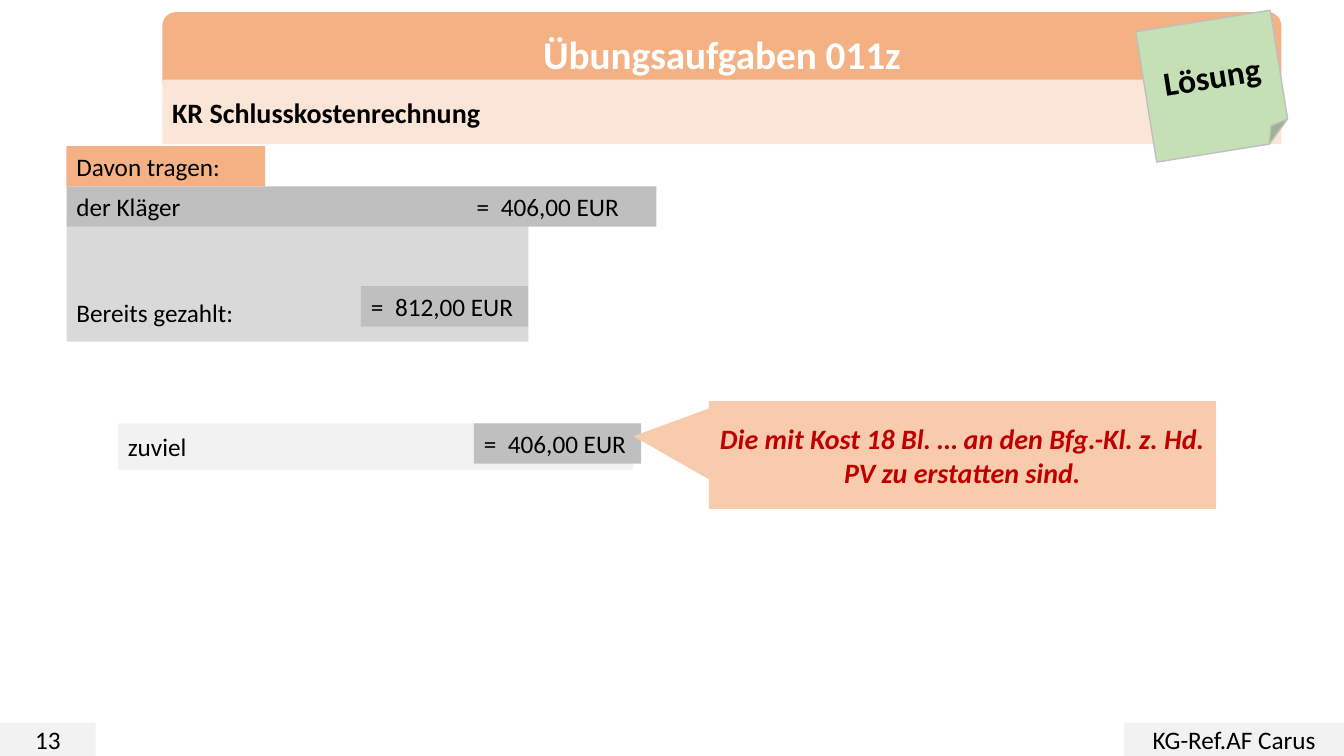
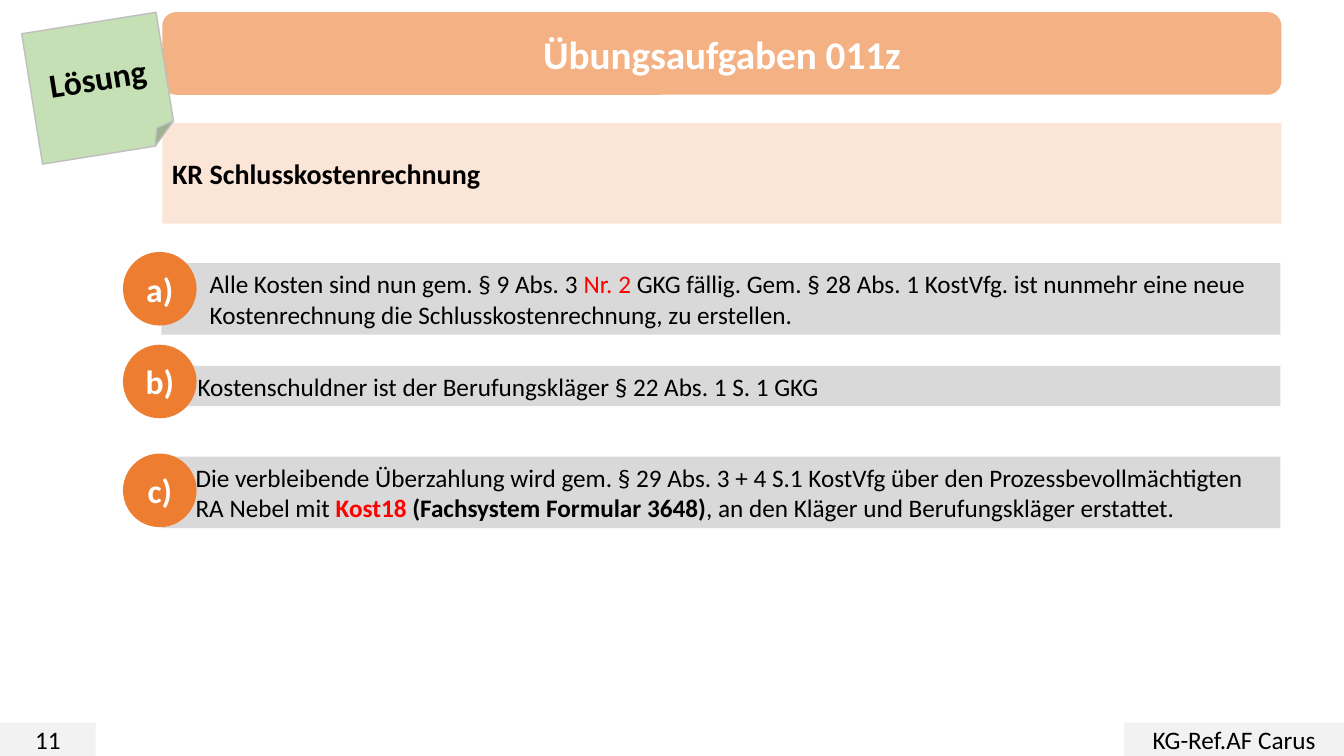
"""Build two solution slides about a final court-cost statement."""
from dataclasses import dataclass

from lxml import etree
from pptx import Presentation
from pptx.dml.color import RGBColor
from pptx.enum.shapes import MSO_SHAPE
from pptx.enum.text import MSO_ANCHOR, MSO_AUTO_SIZE, PP_ALIGN
from pptx.oxml.ns import qn
from pptx.util import Inches, Pt

RECT = MSO_SHAPE.RECTANGLE
ROUNDED = MSO_SHAPE.ROUNDED_RECTANGLE
NOTE = MSO_SHAPE.FOLDED_CORNER
TRIANGLE = MSO_SHAPE.ISOSCELES_TRIANGLE
DISC = MSO_SHAPE.FLOWCHART_CONNECTOR
LEFT, CENTER = PP_ALIGN.LEFT, PP_ALIGN.CENTER
MIDDLE, BOTTOM = MSO_ANCHOR.MIDDLE, MSO_ANCHOR.BOTTOM
FIXED_SIZE = MSO_AUTO_SIZE.NONE
TITLE_ONLY = 5


@dataclass(frozen=True)
class Theme:
    """Colours, font, type sizes and shared positions."""
    font: str = "Calibri"
    title_size: int = 28
    label_size: int = 24
    heading_size: int = 20
    body_size: int = 18
    black: str = "000000"
    white: str = "FFFFFF"
    red: str = "FF0000"
    dark_red: str = "C00000"
    orange: str = "ED7D31"
    apricot: str = "F4B183"
    peach: str = "F8CBAD"
    cream: str = "FBE5D6"
    green: str = "C5E0B4"
    mid_grey: str = "BFBFBF"
    light_grey: str = "D9D9D9"
    pale_grey: str = "F2F2F2"
    band_left: float = 1.61
    band_width: float = 11.1
    row_height: float = 0.4
    disc_size: float = 0.73
    amount_tab: float = 0.24


THEME = Theme()


def rgb(code):
    """Turn a hex code into a colour."""
    return RGBColor.from_string(code)


def place(shape, box):
    """Move and size a shape from left, top, width and height in inches."""
    shape.left, shape.top, shape.width, shape.height = map(Inches, box)


def add_run(paragraph, text, size=THEME.body_size, color=THEME.black,
            bold=False, italic=False):
    """Append one formatted run."""
    run = paragraph.add_run()
    run.text = text
    font = run.font
    font.name, font.size = THEME.font, Pt(size)
    font.bold, font.italic = bold, italic
    font.color.rgb = rgb(color)


def add_tabs(paragraph, stops):
    """Give a paragraph left tab stops, in inches from the text edge."""
    tab_list = etree.SubElement(paragraph._p.get_or_add_pPr(), qn("a:tabLst"))
    for stop in stops:
        etree.SubElement(tab_list, qn("a:tab"), pos=str(Inches(stop)), algn="l")


def write(shape, paragraphs, align=LEFT, anchor=MIDDLE, tabs=(), **style):
    """Fill a shape with paragraphs, each a list of (text, run style) pairs."""
    frame = shape.text_frame
    frame.word_wrap = True
    frame.auto_size = FIXED_SIZE
    frame.vertical_anchor = anchor
    for index, runs in enumerate(paragraphs):
        paragraph = frame.add_paragraph() if index else frame.paragraphs[0]
        paragraph.alignment = align
        if tabs:
            add_tabs(paragraph, tabs)
        for text, run_style in runs:
            add_run(paragraph, text, **{**style, **run_style})


def add_block(slide, box, fill, text=None, kind=RECT, **style):
    """Add a filled shape without outline, with an optional line of text."""
    block = slide.shapes.add_shape(kind, *map(Inches, box))
    block.shadow.inherit = False
    block.fill.solid()
    block.fill.fore_color.rgb = rgb(fill)
    block.line.fill.background()
    if text:
        write(block, [[(text, {})]], **style)
    return block


def add_title(slide, text):
    """Place the slide title on its rounded band."""
    box = (THEME.band_left, 0.12, THEME.band_width, 0.82)
    band = add_block(slide, box, THEME.apricot, kind=ROUNDED)
    title = slide.shapes.title
    title._element.addprevious(band._element)
    place(title, box)
    write(title, [[(text, {})]], align=CENTER, size=THEME.title_size,
          color=THEME.white, bold=True)


def add_solution_note(slide, left, top):
    """Add the tilted sticky note."""
    note = add_block(slide, (left, top, 1.35, 1.31), THEME.green, "Lösung",
                     kind=NOTE, align=CENTER, size=THEME.label_size, bold=True)
    note.line.color.rgb = rgb(THEME.mid_grey)
    note.line.width = Pt(1)
    note.rotation = 350.9


def add_footer(slide, number):
    """Add the page number and the author label."""
    for left, width, text in ((0, 0.95, number), (11.15, 2.18, "KG-Ref.AF Carus")):
        add_block(slide, (left, 7.17, width, 0.33), THEME.pale_grey, text,
                  align=CENTER)


def start_slide(deck, number, heading_top, heading_height, note_at):
    """Create a slide with the title, heading band, note and footer."""
    slide = deck.slides.add_slide(deck.slide_layouts[TITLE_ONLY])
    add_title(slide, "Übungsaufgaben 011z")
    add_block(slide, (THEME.band_left, heading_top, THEME.band_width, heading_height),
              THEME.cream, "KR Schlusskostenrechnung",
              size=THEME.heading_size, bold=True)
    add_solution_note(slide, *note_at)
    add_footer(slide, number)
    return slide


def add_amount(slide, left, top, amount):
    """Add a grey cell holding an amount."""
    add_block(slide, (left, top, 1.66, THEME.row_height), THEME.mid_grey,
              f"=\t{amount} EUR", tabs=(THEME.amount_tab,))


def add_refund_callout(slide, text):
    """Add the remark that points to the overpaid amount."""
    pointer = add_block(slide, (6.35, 4.23, 1.01, 0.85), THEME.peach, kind=TRIANGLE)
    pointer.adjustments[0] = 1
    pointer.rotation = 249.8
    add_block(slide, (7.03, 3.98, 5.03, 1.07), THEME.peach, text, align=CENTER,
              size=THEME.heading_size, color=THEME.dark_red, bold=True, italic=True)


def add_answer(slide, label, bar_top, bar_height, disc_top, indent, paragraphs):
    """Add a grey answer bar with its lettered disc."""
    bar = add_block(slide, (1.6, bar_top, THEME.band_width, bar_height),
                    THEME.light_grey)
    bar.text_frame.margin_left = Inches(indent)
    write(bar, paragraphs)
    add_block(slide, (1.22, disc_top, THEME.disc_size, THEME.disc_size),
              THEME.orange, label, kind=DISC, align=CENTER,
              size=THEME.label_size, color=THEME.white, bold=True)


def build_balance_slide(deck):
    """Show what the claimant owes, has paid and gets back."""
    slide = start_slide(deck, "13", 0.79, 0.64, (11.36, 0.2))
    paid = add_block(slide, (0.66, 2.17, 4.58, 1.22), THEME.light_grey,
                     "Bereits gezahlt:", anchor=BOTTOM)
    paid.text_frame.margin_bottom = Inches(0.14)
    add_block(slide, (0.66, 1.45, 1.97, THEME.row_height), THEME.apricot,
              "Davon tragen:")
    add_amount(slide, 3.58, 2.84, "812,00")
    share_tab = 3.97
    add_block(slide, (0.66, 1.85, 5.85, THEME.row_height), THEME.mid_grey,
              "der Kläger\t=\t406,00 EUR",
              tabs=(share_tab, share_tab + THEME.amount_tab))
    add_block(slide, (1.17, 4.2, 5.11, 0.46), THEME.pale_grey, "zuviel")
    add_amount(slide, 4.7, 4.2, "406,00")
    add_refund_callout(
        slide, "Die mit Kost 18 Bl. … an den Bfg.-Kl. z. Hd. PV zu erstatten sind.")


def build_answers_slide(deck):
    """Show the three lettered answers."""
    slide = start_slide(deck, "11", 1.22, 1, (0.31, 0.22))
    red = {"color": THEME.red}
    bold = {"bold": True}
    add_answer(slide, "a)", 2.61, 0.71, 2.5, 0.48, [[
        ("Alle Kosten sind nun gem. § 9 Abs. 3 ", {}),
        ("Nr. 2 ", red),
        ("GKG fällig. Gem. § 28 Abs. 1 KostVfg. ist nunmehr eine neue "
         "Kostenrechnung die Schlusskostenrechnung, zu erstellen.", {}),
    ]])
    add_answer(slide, "b)", 3.63, THEME.row_height, 3.42, 0.36, [[
        ("Kostenschuldner ist der Berufungskläger § 22 Abs. 1 S. 1 GKG", {}),
    ]])
    add_answer(slide, "c)", 4.53, 0.71, 4.5, 0.34, [
        [("Die verbleibende Überzahlung wird gem. § 29 Abs. 3 + 4 S.1 KostVfg "
          "über den Prozessbevollmächtigten", {})],
        [("RA Nebel mit ", {}),
         ("Kost18", {**red, **bold}),
         (" (Fachsystem Formular 3648)", bold),
         (", an den Kläger und Berufungskläger erstattet.", {})],
    ])


def main():
    """Build and save the deck."""
    deck = Presentation()
    deck.slide_width, deck.slide_height = Inches(13.33), Inches(7.5)
    build_balance_slide(deck)
    build_answers_slide(deck)
    deck.save("out.pptx")


if __name__ == "__main__":
    main()
